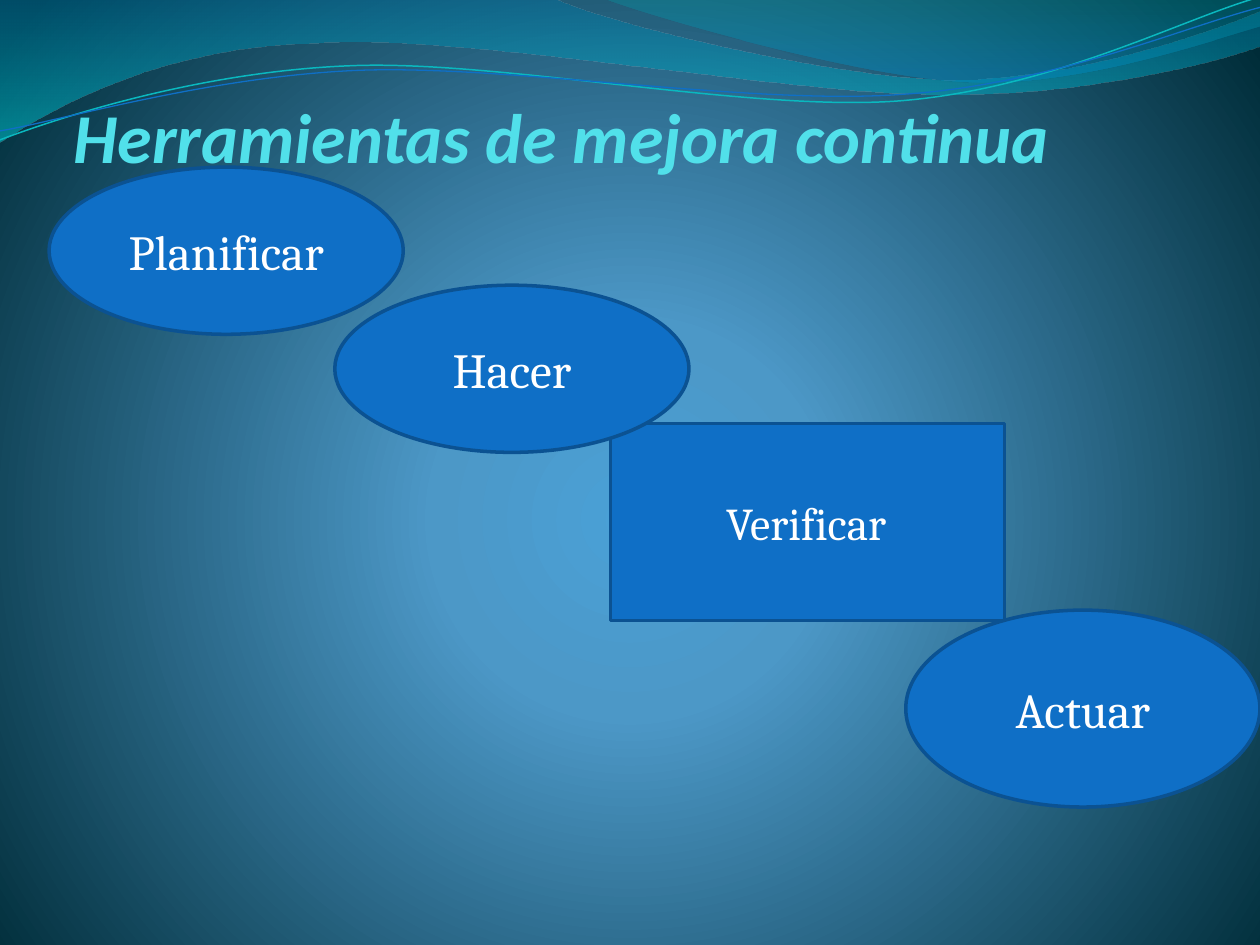
import lxml.etree
import pptx
import pptx.dml.color
import pptx.enum.shapes
import pptx.enum.text
import pptx.oxml.ns
import pptx.util

Cm = pptx.util.Cm
Pt = pptx.util.Pt
SHAPES = pptx.enum.shapes.MSO_SHAPE
ANCHOR = pptx.enum.text.MSO_ANCHOR
ALIGN = pptx.enum.text.PP_ALIGN
qn = pptx.oxml.ns.qn

# Content: lengths in cm, back to front
TITLE = ("Herramientas de mejora continua", (1.49, 0.99, 21.82, 2.59))
STEPS = [
    # text, preset, (left, top, width, height), format
    ("Verificar", SHAPES.RECTANGLE, (12.31, 8.54, 7.94, 3.97),
     dict(size=26, before=5.2, insets=(0, 0.13, 0.05, 0.13))),
    ("Planificar", SHAPES.OVAL, (0.99, 3.37, 7.14, 3.37), {}),
    ("Hacer", SHAPES.OVAL, (6.75, 5.75, 7.14, 3.37), {}),
    ("Actuar", SHAPES.OVAL, (18.26, 12.3, 7.14, 3.97), {}),
]

THEME = {
    "heading_font": "Calibri", "body_font": "Cambria",
    "title_size": 40, "step_size": 28,
    "title": "51E0EA", "text": "FFFFFF", "fill": "0F6FC6", "edge": "0B5292",
    # gradient stops: position %, colour, opacity %
    "background": [(0, "4AA0D6", 100), (25, "4C98C7", 100), (100, "002C38", 100)],
    "back_wave": [(0, "0074A1", 45), (100, "00C6CF", 55)],
    "front_wave": [(0, "00A1A9", 30), (80, "008BBF", 45)],
    "teal_line": ("0AB8BF", 0.85), "blue_line": ("0F6FC6", 0.75),
}

# Outlines: start point, then one point for a line or three for a curve
WAVES = [
    ("back_wave", (0, 0), [
        [(11.18, -0.03)],
        [(12.09, 0.43), (16.87, 1.6), (19.25, 1.6)],
        [(21.67, 1.6), (24.33, 0.66), (25.4, 0.23)],
        [(25.43, 0.91)],
        [(24.97, 1.12), (22.1, 1.93), (18.95, 1.9)],
        [(15.75, 1.9), (9.7, 0.71), (6.53, 0.86)],
        [(3.28, 0.91), (1.17, 2.11), (-0.03, 2.87)],
    ]),
    ("front_wave", (12.17, -0.03), [
        [(12.93, 0.28), (17.32, 1.57), (19.53, 1.65)],
        [(21.74, 1.75), (24.41, 0.81), (25.4, 0.53)],
        [(25.4, 0)],
    ]),
]
STRAND_ROTATION = 357.3
STRANDS = [
    ("teal_line", (-0.05, 2.22), [
        [(1.19, 1.82), (4.02, 1.04), (7.05, 1.06)],
        [(10.05, 1.07), (15.02, 2.37), (18.08, 2.29)],
        [(21.13, 2.2), (23.87, 0.91), (25.41, 0.55)],
    ]),
    ("blue_line", (-0.04, 2.04), [
        [(1.16, 1.9), (4.18, 1.15), (7.2, 1.16)],
        [(10.25, 1.18), (15.13, 2.25), (18.19, 2.16)],
        [(21.21, 2.1), (23.93, 1.06), (25.45, 0.75)],
    ]),
]


def rgb(color):
    return pptx.dml.color.RGBColor.from_string(color)


def add_node(parent, tag, **attributes):
    values = {name: str(value) for name, value in attributes.items()}
    return lxml.etree.SubElement(parent, qn(tag), values)


def set_gradient(owner, fill, stops, center=None):
    """Radial around center (a rectangle in %), otherwise top to bottom."""
    fill.gradient()
    gradient = owner.element.find(".//" + qn("a:gradFill"))
    for child in list(gradient):
        gradient.remove(child)
    stop_list = add_node(gradient, "a:gsLst")
    for position, color, opacity in stops:
        stop = add_node(stop_list, "a:gs", pos=position * 1000)
        shade = add_node(stop, "a:srgbClr", val=color)
        if opacity < 100:
            add_node(shade, "a:alpha", val=opacity * 1000)
    if center:
        sides = {side: value * 1000 for side, value in zip("ltrb", center)}
        add_node(add_node(gradient, "a:path", path="circle"), "a:fillToRect", **sides)
    else:
        add_node(gradient, "a:lin", ang=5400000, scaled=0)


def add_outline(shapes, start, segments, close):
    """Lay down every point, then join each group of three into one curve."""
    points = [(Cm(x), Cm(y)) for segment in segments for x, y in segment]
    builder = shapes.build_freeform(Cm(start[0]), Cm(start[1]))
    builder.add_line_segments(points, close=close)
    shape = builder.convert_to_shape()
    shape.shadow.inherit = False
    lines = iter(list(shape.element.iter(qn("a:lnTo"))))
    for segment in segments:
        group = [next(lines) for point in segment]
        if len(group) == 3:
            curve = lxml.etree.Element(qn("a:cubicBezTo"))
            group[0].addprevious(curve)
            for line in group:
                curve.append(line[0])
                line.getparent().remove(line)
    return shape


def write(box, text, font=THEME["body_font"], size=THEME["step_size"], color=THEME["text"],
          bold=False, italic=False, align=ALIGN.CENTER, anchor=ANCHOR.MIDDLE,
          before=0, insets=(0.25, 0.13, 0.25, 0.13)):
    frame = box.text_frame
    frame.word_wrap = True
    frame.vertical_anchor = anchor
    (frame.margin_left, frame.margin_top,
     frame.margin_right, frame.margin_bottom) = map(Cm, insets)
    para = frame.paragraphs[0]
    para.alignment = align
    para.space_before = Pt(before)
    span = para.add_run()
    span.text = text
    span.font.name, span.font.size = font, Pt(size)
    span.font.bold, span.font.italic = bold, italic
    span.font.color.rgb = rgb(color)


def main():
    deck = pptx.Presentation()
    deck.slide_width, deck.slide_height = Cm(25.4), Cm(19.05)
    page = deck.slides.add_slide(deck.slide_layouts[6])

    # Background and waves
    set_gradient(page, page.background.fill, THEME["background"], center=(10, 110, 10, 100))
    for style, start, segments in WAVES:
        wave = add_outline(page.shapes, start, segments, close=True)
        set_gradient(wave, wave.fill, THEME[style])
        wave.line.fill.background()

    # Thin strands over the waves
    strands = page.shapes.add_group_shape()
    for style, start, segments in STRANDS:
        strand = add_outline(strands.shapes, start, segments, close=False)
        color, width = THEME[style]
        strand.rotation = STRAND_ROTATION
        strand.fill.background()
        strand.line.color.rgb = rgb(color)
        strand.line.width = Pt(width)

    # Title
    text, place = TITLE
    write(page.shapes.add_textbox(*map(Cm, place)), text, font=THEME["heading_font"],
          size=THEME["title_size"], color=THEME["title"], bold=True, italic=True,
          align=ALIGN.LEFT, anchor=ANCHOR.BOTTOM, insets=(0, 0, 0.05, 0))

    # Cycle steps
    for text, preset, place, style in STEPS:
        box = page.shapes.add_shape(preset, *map(Cm, place))
        box.shadow.inherit = False
        box.fill.solid()
        box.fill.fore_color.rgb = rgb(THEME["fill"])
        box.line.color.rgb = rgb(THEME["edge"])
        box.line.width = Pt(2)
        write(box, text, **style)

    deck.save("out.pptx")


if __name__ == "__main__":
    main()
